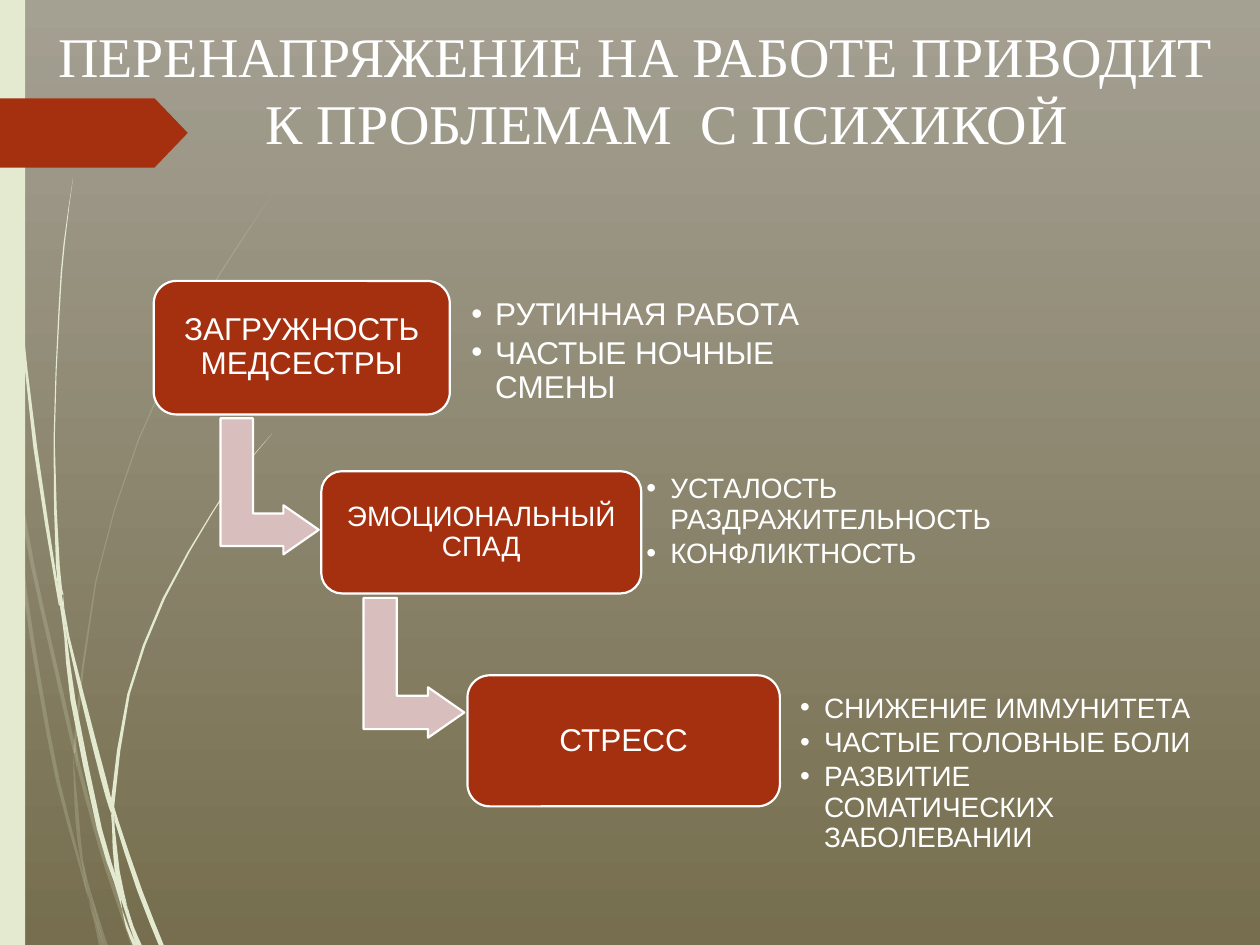
"""Build a slide that steps from workload to stress, over a background of curved strands."""
import pptx
import pptx.dml.color
import pptx.enum.shapes
import pptx.enum.text
import pptx.oxml
import pptx.oxml.ns
import pptx.util

Inches, Pt = pptx.util.Inches, pptx.util.Pt
SHAPE = pptx.enum.shapes.MSO_SHAPE
ANCHOR = pptx.enum.text.MSO_ANCHOR
ALIGN = pptx.enum.text.PP_ALIGN

COLORS = {"top": "A4A092", "bottom": "766E4E", "strand": "E3EACF",
          "accent": "A53010", "arrow": "D8BEBD", "white": "FFFFFF"}

TITLE = "ПЕРЕНАПРЯЖЕНИЕ НА РАБОТЕ ПРИВОДИТ К ПРОБЛЕМАМ  С ПСИХИКОЙ"

STEPS = [
    {"label": "ЗАГРУЖНОСТЬ МЕДСЕСТРЫ", "size": 18, "box": (1.22, 2.23, 2.35, 1.06),
     "items": ["РУТИННАЯ РАБОТА", "ЧАСТЫЕ НОЧНЫЕ СМЕНЫ"],
     "item_size": 18, "list": (3.67, 2.29, 3.33, 1.0)},
    {"label": "ЭМОЦИОНАЛЬНЫЙ СПАД", "size": 16, "box": (2.55, 3.74, 2.54, 0.97),
     "items": ["УСТАЛОСТЬ РАЗДРАЖИТЕЛЬНОСТЬ", "КОНФЛИКТНОСТЬ"],
     "item_size": 16, "list": (5.06, 3.69, 3.32, 0.91)},
    {"label": "СТРЕСС", "size": 18, "box": (3.71, 5.36, 2.48, 1.04),
     "items": ["СНИЖЕНИЕ ИММУНИТЕТА", "ЧАСТЫЕ ГОЛОВНЫЕ БОЛИ",
               "РАЗВИТИЕ СОМАТИЧЕСКИХ ЗАБОЛЕВАНИИ"],
     "item_size": 16, "list": (6.28, 5.51, 3.25, 1.26)},
]
ARROWS = [(1.6, 3.47, 1.08, 0.78), (2.73, 4.9, 1.11, 0.8)]

FAINT_STRANDS = [
    [(0, 2.82, 0), (0.01, 2.99, 0.02), (0.06, 3.3, 0.01), (0.08, 3.5, 0)],
    [(0.1, 3.45, 0), (0.13, 3.76, 0.03), (0.26, 4.49, 0.03), (0.42, 5.2, 0.03),
     (0.57, 5.86, 0.03), (0.59, 5.99, 0)],
    [(0.61, 5.96, 0), (0.63, 6.1, 0.03), (0.74, 6.52, 0.03), (0.86, 6.93, 0.03),
     (1.06, 7.5, 0.04)],
    [(0.73, 7.11, 0), (0.79, 7.33, 0.02), (0.84, 7.5, 0.03)],
    [(0.08, 3.5, 0), (0.12, 3.95, 0.02), (0.2, 4.7, 0.03), (0.32, 5.46, 0.03),
     (0.46, 6.2, 0.03), (0.64, 6.88, 0.02), (0.7, 7.14, 0)],
    [(0.58, 5.99, 0), (0.61, 6.46, 0.03), (0.65, 6.83, 0.02), (0.73, 7.11, 0)],
    [(2.17, 1.53, 0), (1.87, 1.98, 0.01), (1.59, 2.45, 0.01), (1.1, 3.49, 0.01),
     (0.76, 4.62, 0.01), (0.6, 5.84, 0.02), (0.61, 5.96, 0)],
    [(0.7, 7.14, 0), (0.76, 7.33, 0.02), (0.8, 7.5, 0.03)],
    [(0.59, 5.86, 0), (0.6, 5.97, 0.03), (0.61, 6.1, 0)],
    [(0.65, 6.83, 0), (0.68, 7.0, 0.02), (0.72, 7.13, 0.03), (0.82, 7.5, 0.01)],
]
BRIGHT_STRANDS = [
    [(0.02, 0, 0.01), (0.03, 0.48, 0.01), (0.06, 1.1, 0.01), (0.15, 2.33, 0.01),
     (0.28, 3.55, 0.03), (0.45, 4.65, 0.02), (0.47, 4.81, 0)],
    [(0.5, 4.72, 0), (0.54, 5.05, 0.02), (0.75, 5.91, 0.04), (0.86, 6.33, 0.04),
     (0.88, 6.45, 0)],
    [(0.91, 6.41, 0), (0.93, 6.53, 0.03), (1.11, 7.07, 0.04), (1.28, 7.5, 0.04)],
    [(0.47, 4.77, 0), (0.52, 5.05, 0.02), (0.58, 5.56, 0.04), (0.79, 6.58, 0.04),
     (0.92, 7.0, 0.03), (0.97, 7.22, 0)],
    [(0.58, 1.41, 0), (0.51, 1.93, 0.01), (0.47, 2.45, 0.01), (0.43, 3.49, 0.01),
     (0.46, 4.5, 0.03), (0.5, 4.72, 0.01)],
    [(1.01, 7.19, 0), (1.05, 7.35, 0.02), (1.11, 7.5, 0.03)],
    [(0.45, 4.49, 0), (0.48, 4.74, 0.03), (0.53, 5.05, 0)],
    [(2.16, 3.44, 0), (1.91, 3.74, 0.01), (1.69, 4.06, 0.01), (1.3, 4.75, 0.02),
     (1.02, 5.51, 0.02), (0.9, 6.32, 0.03), (0.91, 6.41, 0)],
    [(0.97, 7.22, 0), (1.01, 7.36, 0.02), (1.07, 7.5, 0.03)],
    [(0.88, 6.45, 0), (0.9, 6.56, 0.02), (0.93, 6.91, 0.04), (1.01, 7.19, 0)],
    [(0.88, 6.31, 0), (0.89, 6.41, 0.03), (0.91, 6.56, 0)],
    [(0.91, 6.91, 0), (0.97, 7.12, 0.03), (1.09, 7.5, 0.02)],
]


def rgb(name):
    return pptx.dml.color.RGBColor.from_string(COLORS[name])


def xml(tag, attributes):
    return pptx.oxml.parse_xml(f'<a:{tag} {pptx.oxml.ns.nsdecls("a")} {attributes}/>')


def paint(sp, fill, outlined=False):
    sp.shadow.inherit = False
    sp.fill.solid()
    sp.fill.fore_color.rgb = rgb(fill)
    if outlined:
        sp.line.color.rgb = rgb("white")
        sp.line.width = Pt(1.25)
    else:
        sp.line.fill.background()


def add_shape(s, kind, box, fill, outlined=False, adjust=()):
    sp = s.shapes.add_shape(kind, *map(Inches, box))
    for i, value in enumerate(adjust):
        sp.adjustments[i] = value
    paint(sp, fill, outlined)
    return sp


def smooth(stations):
    padded = [stations[0], *stations, stations[-1]]
    points = []
    for a, b, c, d in zip(padded, padded[1:], padded[2:], padded[3:]):
        middle = [(9 * (q + r) - p - u) / 16 for p, q, r, u in zip(a, b, c, d)]
        points += [b, middle]
    return points + [stations[-1]]


def add_strand(s, stations, alpha=None):
    points = smooth(stations)
    outline = [(x - w / 2, y) for x, y, w in points]
    outline += [(x + w / 2, y) for x, y, w in reversed(points)]
    outline = [(Inches(max(x, 0)), Inches(y)) for x, y in outline]
    builder = s.shapes.build_freeform(*outline[0], scale=1.0)
    builder.add_line_segments(outline[1:], close=True)
    sp = builder.convert_to_shape()
    paint(sp, "strand")
    if alpha:
        color = sp.element.spPr.find(".//" + pptx.oxml.ns.qn("a:srgbClr"))
        color.append(xml("alpha", f'val="{alpha * 1000}"'))


def place_on_top(sp, box):
    sp.left, sp.top, sp.width, sp.height = map(Inches, box)
    sp.element.getparent().append(sp.element)


def write(tf, lines, size, align, spacing, anchor=ANCHOR.MIDDLE, margin=0.07, font="Arial"):
    tf.word_wrap = True
    tf.auto_size = pptx.enum.text.MSO_AUTO_SIZE.NONE
    tf.vertical_anchor = anchor
    tf.margin_left = tf.margin_right = tf.margin_top = tf.margin_bottom = Inches(margin)
    tf.text = "\n".join(lines)
    for p in tf.paragraphs:
        p.alignment, p.line_spacing, p.space_before = align, spacing, Pt(0)
        for r in p.runs:
            r.font.name, r.font.size, r.font.bold = font, Pt(size), False
            r.font.color.rgb = rgb("white")


def indent(p, left):
    pPr = p._p.get_or_add_pPr()
    pPr.set("marL", str(Inches(left)))
    pPr.set("indent", str(-Inches(left)))
    return pPr


def fill_list(sp, step):
    place_on_top(sp, step["list"])
    size = step["item_size"]
    write(sp.text_frame, step["items"], size, ALIGN.LEFT, 0.9)
    for p in sp.text_frame.paragraphs:
        p.space_after = Pt(size * 0.15)
        pPr = indent(p, 0.19)
        pPr.append(xml("buFont", 'typeface="Arial"'))
        pPr.append(xml("buChar", 'char="•"'))


def main():
    prs = pptx.Presentation()
    prs.slide_width, prs.slide_height = Inches(10), Inches(7.5)
    s = prs.slides.add_slide(prs.slide_layouts.get_by_name("Comparison"))
    title, *bodies = s.placeholders

    fill = s.background.fill
    fill.gradient()
    fill.gradient_angle = 270
    for stop, position, name in zip(fill.gradient_stops, (0, 1), ("top", "bottom")):
        stop.position = position
        stop.color.rgb = rgb(name)

    for strand in FAINT_STRANDS:
        add_strand(s, strand, alpha=20)
    for strand in BRIGHT_STRANDS:
        add_strand(s, strand)
    add_shape(s, SHAPE.RECTANGLE, (0, 0, 0.2, 7.5), "strand")
    add_shape(s, SHAPE.PENTAGON, (0, 0.78, 1.49, 0.55), "accent", adjust=[0.48])

    place_on_top(title, (0.28, 0.13, 9.53, 1.18))
    write(title.text_frame, [TITLE], 32, ALIGN.CENTER, 1.0, ANCHOR.BOTTOM, 0.07,
          "Times New Roman")
    indent(title.text_frame.paragraphs[0], 0.5)

    for step, body, box in zip(STEPS, bodies, [*ARROWS, None]):
        if box:
            arrow = add_shape(s, SHAPE.BENT_UP_ARROW, box, "arrow", True, [0.33, 0.25, 0.36])
            arrow.rotation = 90
        sp = add_shape(s, SHAPE.ROUNDED_RECTANGLE, step["box"], "accent", True, [0.17])
        write(sp.text_frame, [step["label"]], step["size"], ALIGN.CENTER, 0.9)
        fill_list(body, step)
    for body in bodies[len(STEPS):]:
        body.element.getparent().remove(body.element)

    prs.save("out.pptx")


if __name__ == "__main__":
    main()
